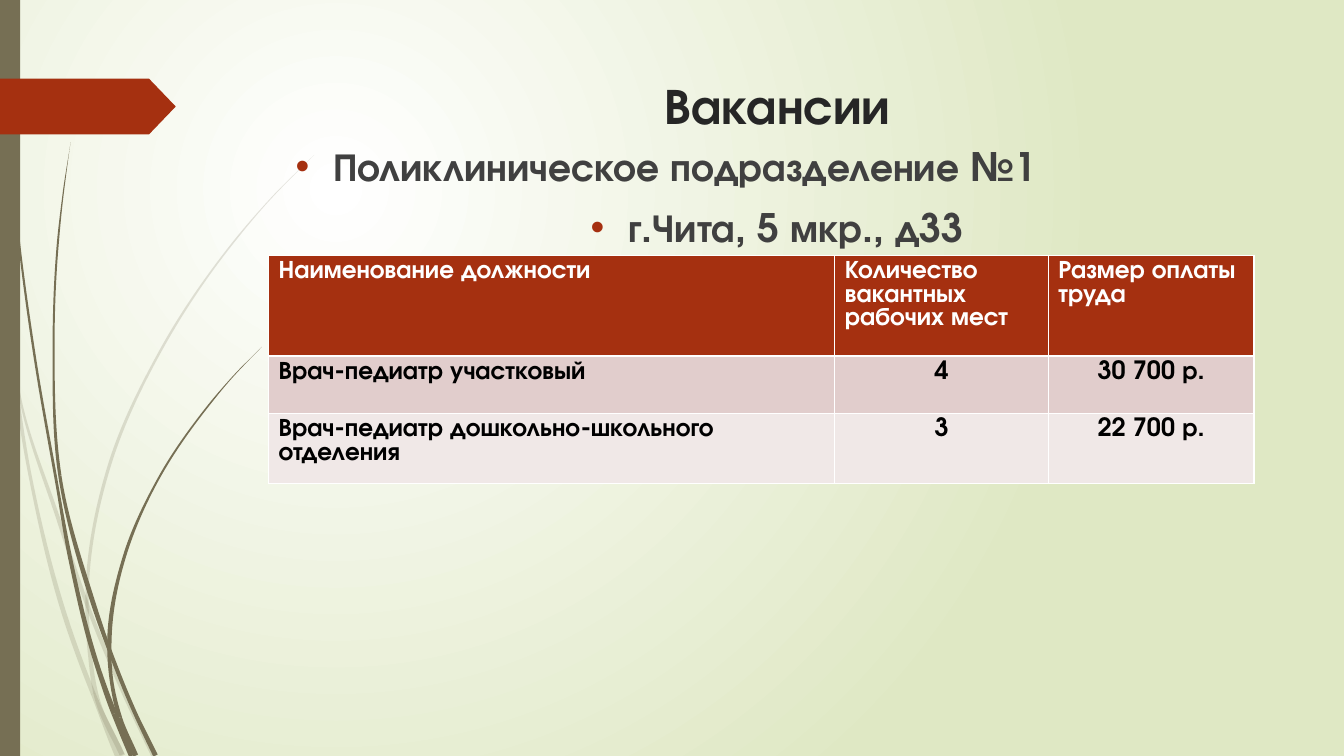
from math import dist, hypot

from lxml.etree import SubElement
from pptx import Presentation
from pptx.dml.color import RGBColor
from pptx.enum.shapes import MSO_SHAPE as Shape
from pptx.enum.text import PP_ALIGN as Align
from pptx.oxml.ns import qn
from pptx.util import Cm, Pt

FONT = "TeX Gyre Adventor"
COLORS = {
    "white": "FFFFFF", "pale green": "DFE8C4", "olive": "766F54",
    "rust": "A53010", "title": "262626", "body": "404040", "black": "000000",
    "band dark": "E1CDCC", "band light": "F0E8E7",
}

TITLE = "Вакансии"
ADDRESS = [
    ("Поликлиническое подразделение №1", Align.LEFT),
    ("г.Чита, 5 мкр., д33", Align.CENTER),
]
VACANCIES = [
    ("Наименование должности", "Количество вакантных рабочих мест", "Размер оплаты труда"),
    ("Врач-педиатр участковый", "4", "30 700 р."),
    ("Врач-педиатр дошкольно-школьного отделения", "3", "22 700 р."),
]
COLUMN_WIDTHS = [14.27, 5.38, 5.18]
ROW_HEIGHTS = [2.01, 1.44, 1.44]
ROW_FILLS = ["rust", "band dark", "band light"]

# Each blade: centre line of (x, y, thickness) in centimetres, then its joints.
FAINT_BLADES = [
    ([(0, 7.37, .12), (.23, 8.53, .13), (.28, 8.89, .1), (.75, 11.94, .08),
      (1.71, 15.75, .12), (2.35, 17.48, .12), (3.02, 19.04, .24)], [2, 5]),
    ([(.36, 8.76, 0), (.41, 9.4, .05), (1.52, 13.23, .1), (2.18, 15.19, .1),
      (3.18, 17.6, .1), (3.87, 19.04, .12)], [3]),
    ([(7.92, 3.9, 0), (6.81, 5.02, .02), (5.8, 6.21, .04), (4.04, 8.85, .06),
      (2.76, 11.72, .08), (2.2, 14.83, .08), (2.26, 16.41, .1),
      (2.46, 17.65, .12), (3.09, 19.04, .13)], [5, 7]),
]
SOLID_BLADES = [
    ([(.09, 0, .03), (.15, 1.22, .03), (.19, 2.79, .03), (.46, 5.92, .05),
      (.88, 9.02, .06), (1.42, 12.12, .07), (1.78, 14.12, .1),
      (2.43, 16.71, .12), (2.88, 17.98, .14), (3.34, 19.04, .18)], [5, 8]),
    ([(1.78, 3.58, 0), (1.59, 4.9, .03), (1.45, 6.22, .05), (1.35, 8.86, .05),
      (1.51, 11.99, .08), (2.29, 15.01, .12), (2.76, 16.38, .1),
      (3.4, 17.96, .1), (3.92, 19.04, .12)], [4, 6]),
    ([(6.6, 8.74, 0), (5.87, 9.49, .02), (5.19, 10.3, .04), (3.99, 12.07, .05),
      (3.14, 14.01, .08), (2.76, 16.05, .11), (2.81, 17.15, .09),
      (3.02, 18.08, .11), (3.42, 19.04, .13)], [5, 7]),
]


def rgb(name):
    return RGBColor.from_string(COLORS[name])


def fill_plain(shape, color):
    shape.shadow.inherit = False
    shape.fill.solid()
    shape.fill.fore_color.rgb = rgb(color)
    shape.line.fill.background()


def directions(points):
    """Return the unit tangent of the centre line at each point."""
    chords = [(b[0] - a[0], b[1] - a[1]) for a, b in zip(points, points[1:])]
    tangents = []
    for before, after in zip([chords[0], *chords], [*chords, chords[-1]]):
        ratio = hypot(*after) / hypot(*before)
        dx, dy = (p * ratio + q / ratio for p, q in zip(before, after))
        tangents.append((dx / hypot(dx, dy), dy / hypot(dx, dy)))
    return tangents


def bend(shape, outline, tangents):
    """Turn the straight sides of a section into cubic curves, except its end."""
    lines = shape._element.findall(".//" + qn("a:lnTo"))
    for index, line in enumerate(lines):
        if index == len(outline) // 2 - 1:
            continue
        start, end = outline[index:index + 2]
        reach = dist(start, end) / 3
        controls = [
            [p + t * reach for p, t in zip(start, tangents[index])],
            [p - t * reach for p, t in zip(end, tangents[index + 1])],
        ]
        line.tag = qn("a:cubicBezTo")
        for position, (x, y) in enumerate(controls):
            point = SubElement(line, qn("a:pt"), x=str(Cm(x) - shape.left),
                               y=str(Cm(y) - shape.top))
            line.insert(position, point)


def add_blade(slide, points, joints, opacity=None):
    """Draw a tapered blade of grass, one section between each pair of joints."""
    tangents = directions(points)
    edges = [
        [(max(x - dy * side * thickness / 2, 0), y + dx * side * thickness / 2)
         for (x, y, thickness), (dx, dy) in zip(points, tangents)]
        for side in (1, -1)
    ]
    for first, last in zip([0, *joints], [*joints, len(points) - 1]):
        part = slice(first, last + 1)
        outline = edges[0][part] + edges[1][part][::-1]
        backward = [(-dx, -dy) for dx, dy in tangents[part]][::-1]
        corners = [(Cm(x), Cm(y)) for x, y in outline]
        builder = slide.shapes.build_freeform(*corners[0])
        builder.add_line_segments(corners[1:], close=True)
        section = builder.convert_to_shape()
        bend(section, outline, tangents[part] + backward)
        fill_plain(section, "olive")
        if opacity:
            color = section._element.spPr.find(qn("a:solidFill"))[0]
            SubElement(color, qn("a:alpha"), val=str(opacity * 1000))


def write(paragraph, text, size, color, **formats):
    run = paragraph.add_run()
    run.text = text
    for name, value in {"name": FONT, "size": Pt(size), "bold": True}.items():
        setattr(run.font, name, value)
    run.font.color.rgb = rgb(color)
    for name, value in formats.items():
        setattr(paragraph, name, value)


def add_bullet(paragraph):
    properties = paragraph._p.get_or_add_pPr()
    properties.set("marL", str(Cm(.95)))
    properties.set("indent", str(-Cm(.95)))
    color = SubElement(properties, qn("a:buClr"))
    SubElement(color, qn("a:srgbClr"), val=COLORS["rust"])
    SubElement(properties, qn("a:buFont"), typeface="Arial")
    SubElement(properties, qn("a:buChar"), char="•")


def add_text_frame(slide, left, top, width, height):
    frame = slide.shapes.add_textbox(Cm(left), Cm(top), Cm(width), Cm(height)).text_frame
    frame.word_wrap = True
    return frame


def set_background(slide):
    fill = slide.background.fill
    fill.gradient()
    for stop, color in zip(fill.gradient_stops, ("white", "pale green")):
        stop.color.rgb = rgb(color)
    gradient = slide._element.find(".//" + qn("a:gradFill"))
    gradient.remove(gradient.find(qn("a:lin")))
    circle = SubElement(gradient, qn("a:path"), path="circle")
    SubElement(circle, qn("a:fillToRect"), l="50000", t="50000", r="100000", b="100000")


def style_cell(cell, fill):
    properties = cell._tc.get_or_add_tcPr()
    for side in ("lnL", "lnR", "lnT", "lnB"):
        line = SubElement(properties, qn("a:" + side), w=str(Pt(1)))
        SubElement(SubElement(line, qn("a:solidFill")), qn("a:srgbClr"), val=COLORS["white"])
    cell.fill.solid()
    cell.fill.fore_color.rgb = rgb(fill)


def add_vacancies(slide):
    table = slide.shapes.add_table(
        len(VACANCIES), len(COLUMN_WIDTHS), Cm(6.77), Cm(6.43),
        Cm(sum(COLUMN_WIDTHS)), Cm(sum(ROW_HEIGHTS))).table
    for column, width in zip(table.columns, COLUMN_WIDTHS):
        column.width = Cm(width)
    for row_index, (row, height) in enumerate(zip(table.rows, ROW_HEIGHTS)):
        row.height = Cm(height)
        for column_index, text in enumerate(VACANCIES[row_index]):
            cell = table.cell(row_index, column_index)
            style_cell(cell, ROW_FILLS[row_index])
            centred = row_index and column_index
            write(cell.text_frame.paragraphs[0], text, 18,
                  "black" if row_index else "white",
                  alignment=Align.CENTER if centred else Align.LEFT)


def main():
    presentation = Presentation()
    presentation.slide_width, presentation.slide_height = Cm(33.87), Cm(19.05)
    slide = presentation.slides.add_slide(presentation.slide_layouts[6])
    set_background(slide)

    for points, joints in FAINT_BLADES:
        add_blade(slide, points, joints, opacity=20)
    for points, joints in SOLID_BLADES:
        add_blade(slide, points, joints)
    stripe = slide.shapes.add_shape(Shape.RECTANGLE, 0, 0, Cm(.51), Cm(19.05))
    fill_plain(stripe, "olive")
    arrow = slide.shapes.add_shape(Shape.PENTAGON, 0, Cm(1.98), Cm(4.43), Cm(1.41))
    arrow.adjustments[0] = .48
    fill_plain(arrow, "rust")

    title = add_text_frame(slide, 7.21, 1.74, 24.77, 4.32)
    write(title.paragraphs[0], TITLE, 36, "title", alignment=Align.CENTER)
    address = add_text_frame(slide, 7.2, 3.46, 24.77, 12.95)
    for index, (text, alignment) in enumerate(ADDRESS):
        paragraph = address.add_paragraph() if index else address.paragraphs[0]
        write(paragraph, text, 28, "body", alignment=alignment, space_before=Pt(10))
        add_bullet(paragraph)
    add_vacancies(slide)
    presentation.save("out.pptx")


if __name__ == "__main__":
    main()
